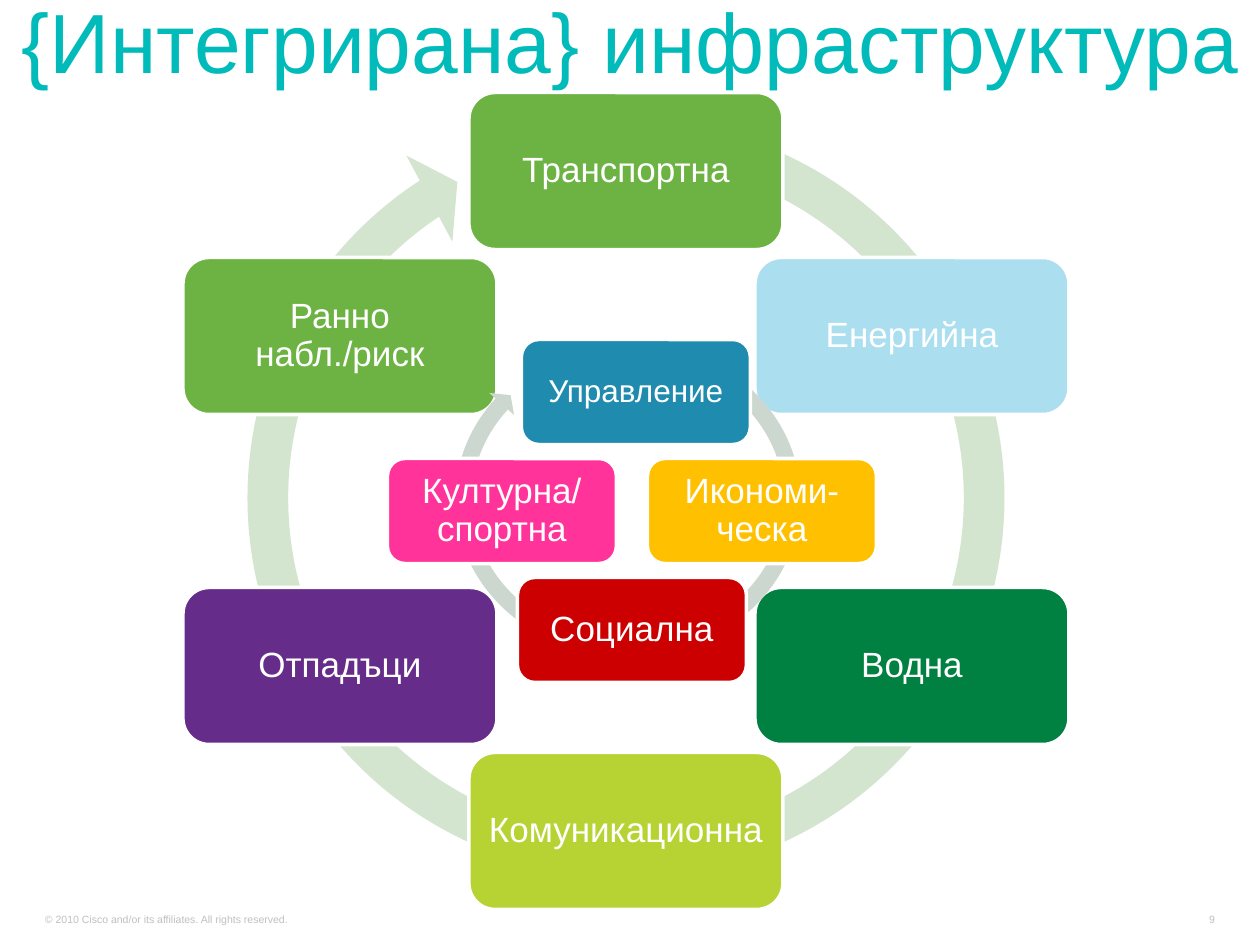
import pptx
import pptx.util
import pptx.dml.color
import pptx.enum.shapes
import pptx.enum.text

PX = 914400 // 126
SHAPE = pptx.enum.shapes.MSO_SHAPE
ALIGN = pptx.enum.text.PP_ALIGN
ANCHOR = pptx.enum.text.MSO_ANCHOR

COLORS = {
    "white": "FFFFFF", "title": "01BBBB", "footer": "C0C0C0",
    "outer ring": "D4E5CF", "inner ring": "CCD8CF",
    "green": "6DB344", "sky": "ABDFF0", "forest": "008041",
    "lime": "B7D333", "purple": "652D89", "blue": "1F8BAE",
    "amber": "FFC000", "red": "CC0000", "pink": "FF3399",
}

TITLE = "{Интегрирана} инфраструктура"
COPYRIGHT = "© 2010 Cisco and/or its affiliates. All rights reserved."
PAGE = "9"

# Each node: text, fill, column and row step from the centre, text size
CYCLES = [
    {
        "arrow": (219, 91, 814, 814), "arrow color": "outer ring",
        "adjustments": (0.05, 3.13, 142.02, 171.42, 0.06),
        "centre": (626, 501), "step": (286, 165), "box": (314, 157),
        "inset": 10,
        "nodes": [
            ("Транспортна", "green", 0, -2, 20),
            ("Енергийна", "sky", 1, -1, 20),
            ("Водна", "forest", 1, 1, 20),
            ("Комуникационна", "lime", 0, 2, 20),
            ("Отпадъци", "purple", -1, 1, 20),
            ("Ранно\vнабл./риск", "green", -1, -1, 20),
        ],
    },
    {
        "arrow": (447, 334, 362, 331), "arrow color": "inner ring",
        "adjustments": (0.05, 2.73, 130.25, 179, 0.05),
        "centre": (632, 511), "step": (130, 119), "box": (229, 105),
        "inset": 14,
        "nodes": [
            ("Управление", "blue", 0.03, -1, 18),
            ("Икономи-ческа", "amber", 1, 0, 20),
            ("Социална", "red", 0, 1, 20),
            ("Културна/\vспортна", "pink", -1, 0, 20),
        ],
    },
]


def emu(*lengths):
    return [round(length * PX) for length in lengths]


def rgb(name):
    return pptx.dml.color.RGBColor.from_string(COLORS[name])


def write(frame, text, size, color, align, anchor, insets, spacing=1.0, wrap=True):
    """Fill a text frame with one paragraph; insets are horizontal, vertical."""
    frame.text = text
    frame.word_wrap = wrap
    frame.vertical_anchor = anchor
    frame.margin_left = frame.margin_right = emu(insets[0])[0]
    frame.margin_top = frame.margin_bottom = emu(insets[1])[0]
    paragraph = frame.paragraphs[0]
    paragraph.alignment = align
    paragraph.line_spacing = spacing
    for run in paragraph.runs:
        run.font.name = "Arial"
        run.font.size = pptx.util.Pt(size)
        run.font.color.rgb = rgb(color)


def add_filled(shapes, preset, place, color):
    shape = shapes.add_shape(preset, *emu(*place))
    shape.shadow.inherit = False
    shape.fill.solid()
    shape.fill.fore_color.rgb = rgb(color)
    return shape


def add_cycle(slide, cycle):
    shapes = slide.shapes.add_group_shape().shapes
    arrow = add_filled(shapes, SHAPE.CIRCULAR_ARROW, cycle["arrow"], cycle["arrow color"])
    arrow.line.fill.background()
    for index, value in enumerate(cycle["adjustments"]):
        arrow.adjustments[index] = value

    (centre_x, centre_y), (step_x, step_y) = cycle["centre"], cycle["step"]
    width, height = cycle["box"]
    for text, color, column, row, size in cycle["nodes"]:
        left = centre_x + column * step_x - width / 2
        top = centre_y + row * step_y - height / 2
        node = add_filled(shapes, SHAPE.ROUNDED_RECTANGLE, (left, top, width, height), color)
        node.line.color.rgb = rgb("white")
        node.line.width = pptx.util.Pt(2)
        write(node.text_frame, text, size, "white", ALIGN.CENTER, ANCHOR.MIDDLE,
              (cycle["inset"], cycle["inset"]), 0.9)


def add_label(slide, place, *text_settings, **options):
    label = slide.shapes.add_textbox(*emu(*place))
    write(label.text_frame, *text_settings, **options)


def main():
    deck = pptx.Presentation()
    deck.slide_width, deck.slide_height = emu(1260, 945)
    slide = deck.slides.add_slide(deck.slide_layouts[6])
    add_label(slide, (34, 907, 471, 24), COPYRIGHT, 6, "footer",
              ALIGN.LEFT, ANCHOR.BOTTOM, (11, 5))
    add_label(slide, (1191, 907, 35, 24), PAGE, 6, "footer",
              ALIGN.RIGHT, ANCHOR.BOTTOM, (11, 5), wrap=False)
    add_label(slide, (11, -24, 1249, 120), TITLE, 48, "title",
              ALIGN.LEFT, ANCHOR.BOTTOM, (11, 6), spacing=0.8)
    for cycle in CYCLES:
        add_cycle(slide, cycle)
    deck.save("out.pptx")


if __name__ == "__main__":
    main()
